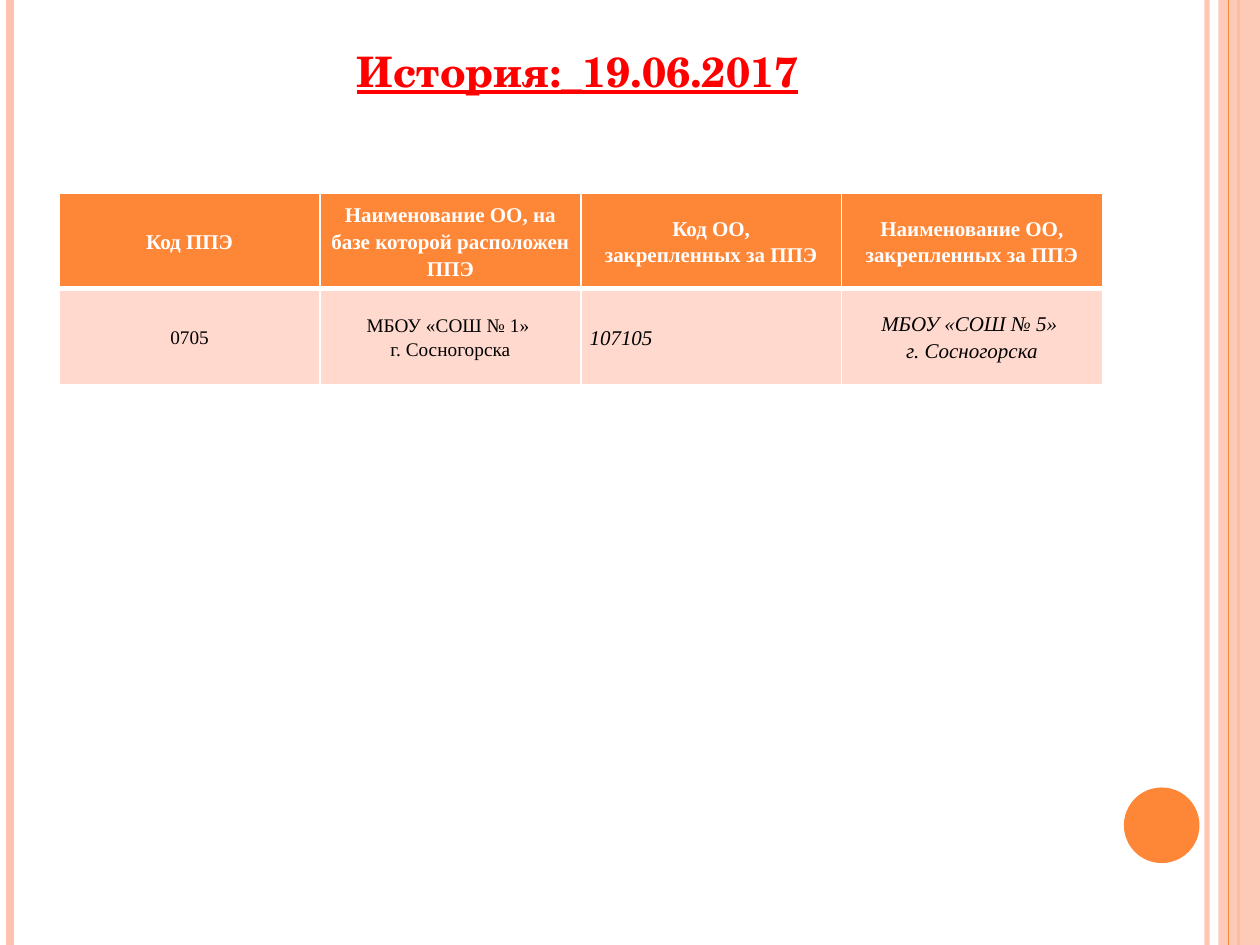
from lxml import etree
from pptx import Presentation, util as u
from pptx.dml.color import RGBColor
from pptx.enum import shapes, text
from pptx.oxml.ns import qn

WIDTH, HEIGHT = 10, 7.5
ORANGE, PEACH, PALE, WHITE = "FE8637", "FEC3AE", "FFD9CE", "FFFFFF"
CENTER = text.PP_ALIGN.CENTER
HEADER = dict(size=12, color=WHITE, bold=True)
PLAIN = dict(size=11)
ITALIC = dict(size=12, italic=True)
# Each cell: its lines, then the text format
TABLE_ROWS = [
    [(["Код ППЭ"], HEADER),
     (["Наименование ОО, на базе которой расположен ППЭ"], HEADER),
     (["Код ОО,", "закрепленных за ППЭ"], HEADER),
     (["Наименование ОО, закрепленных за ППЭ"], HEADER)],
    [(["0705"], PLAIN),
     (["МБОУ «СОШ № 1» ", "г. Сосногорска"], PLAIN),
     (["107105"], dict(ITALIC, align=text.PP_ALIGN.LEFT)),
     (["МБОУ «СОШ № 5» ", "г. Сосногорска"], ITALIC)],
]


def paint(color_format, color, alpha=100):
    """Set a solid colour, with opacity in percent."""
    color_format.rgb = RGBColor.from_string(color)
    if alpha < 100:
        node = color_format._xFill.find(qn("a:srgbClr"))
        etree.SubElement(node, qn("a:alpha"), val=str(alpha * 1000))


def write(para, content, size=12, color="000000", font="Times New Roman",
          bold=False, italic=False, underline=False, align=CENTER,
          spacing=None, before=0):
    para.alignment = align
    para.line_spacing = spacing
    para.space_before = u.Pt(before)
    span = para.add_run()
    span.text = content
    span.font.name, span.font.size = font, u.Pt(size)
    span.font.bold, span.font.italic, span.font.underline = bold, italic, underline
    paint(span.font.color, color)


def add_stripe(page, x, color, weight, alpha=100):
    """Draw a vertical line over the full slide height."""
    line = page.shapes.add_connector(shapes.MSO_CONNECTOR.STRAIGHT,
                                     u.Inches(x), 0, u.Inches(x), u.Inches(HEIGHT))
    line.line.width = u.Pt(weight)
    line.line.fill.solid()
    paint(line.line.fill.fore_color, color, alpha) if alpha == 100 else \
        paint_line(line, color, alpha)
    etree.SubElement(line._element.spPr, qn("a:effectLst"))


def paint_line(line, color, alpha):
    paint(line.line.fill.fore_color, color)
    node = line._element.spPr.find(".//" + qn("a:srgbClr"))
    etree.SubElement(node, qn("a:alpha"), val=str(alpha * 1000))


def add_figure(page, kind, left, top, width, height, color, alpha=100):
    figure = page.shapes.add_shape(kind, *map(u.Inches, (left, top, width, height)))
    figure.shadow.inherit = False
    figure.line.fill.background()
    figure.fill.solid()
    paint(figure.fill.fore_color, color)
    if alpha < 100:
        node = figure._element.spPr.find(".//" + qn("a:srgbClr"))
        etree.SubElement(node, qn("a:alpha"), val=str(alpha * 1000))


def add_title(page, content, **style):
    box = page.shapes.add_textbox(*map(u.Inches, (0.5, 0.31, 8.17, 6.77)))
    box.text_frame.word_wrap = True
    write(box.text_frame.paragraphs[0], content, **style)


def set_borders(cell, **weights):
    """Give the cell white borders; they go before its fill in the XML."""
    props = cell._tc.get_or_add_tcPr()
    for index, (side, weight) in enumerate(weights.items()):
        border = etree.Element(qn("a:ln" + side), w=str(u.Pt(weight)))
        fill = etree.SubElement(border, qn("a:solidFill"))
        etree.SubElement(fill, qn("a:srgbClr"), val=WHITE)
        props.insert(index, border)


def fill_cell(cell, lines, style, color):
    cell.fill.solid()
    paint(cell.fill.fore_color, color)
    cell.vertical_anchor = text.MSO_ANCHOR.MIDDLE
    cell.margin_left = cell.margin_right = u.Inches(0.07)
    cell.margin_top = cell.margin_bottom = 0
    frame = cell.text_frame
    for index, content in enumerate(lines):
        para = frame.add_paragraph() if index else frame.paragraphs[0]
        write(para, content, spacing=1.15, **style)


def add_schedule(page, rows):
    frame = page.shapes.add_table(len(rows), len(rows[0]),
                                  *map(u.Inches, (0.47, 1.53, 8.28, 1.52)))
    for row, entries in enumerate(rows):
        for column, (lines, style) in enumerate(entries):
            cell = frame.table.cell(row, column)
            fill_cell(cell, lines, style, PALE if row else ORANGE)
            set_borders(cell, L=1, R=1, T=3 if row else 1, B=1 if row else 3)


def main():
    deck = Presentation()
    deck.slide_width, deck.slide_height = u.Inches(WIDTH), u.Inches(HEIGHT)
    page = deck.slides.add_slide(deck.slide_layouts[6])

    # Side stripes and circle
    add_stripe(page, 9.58, PEACH, 3, alpha=93)
    add_stripe(page, 0.08, PEACH, 4.5)
    add_stripe(page, 9.83, ORANGE, 1.5)
    add_figure(page, shapes.MSO_SHAPE.RECTANGLE, 9.67, 0, 0.33, HEIGHT, PEACH, alpha=87)
    add_stripe(page, 9.75, ORANGE, 0.75)
    add_figure(page, shapes.MSO_SHAPE.OVAL, 8.92, 6.25, 0.6, 0.6, ORANGE)

    # Title and table
    add_title(page, "История:_19.06.2017", size=24, color="FF0000",
              font="TeX Gyre Schola", bold=True, underline=True, before=6)
    add_schedule(page, TABLE_ROWS)

    deck.save("out.pptx")


if __name__ == "__main__":
    main()
